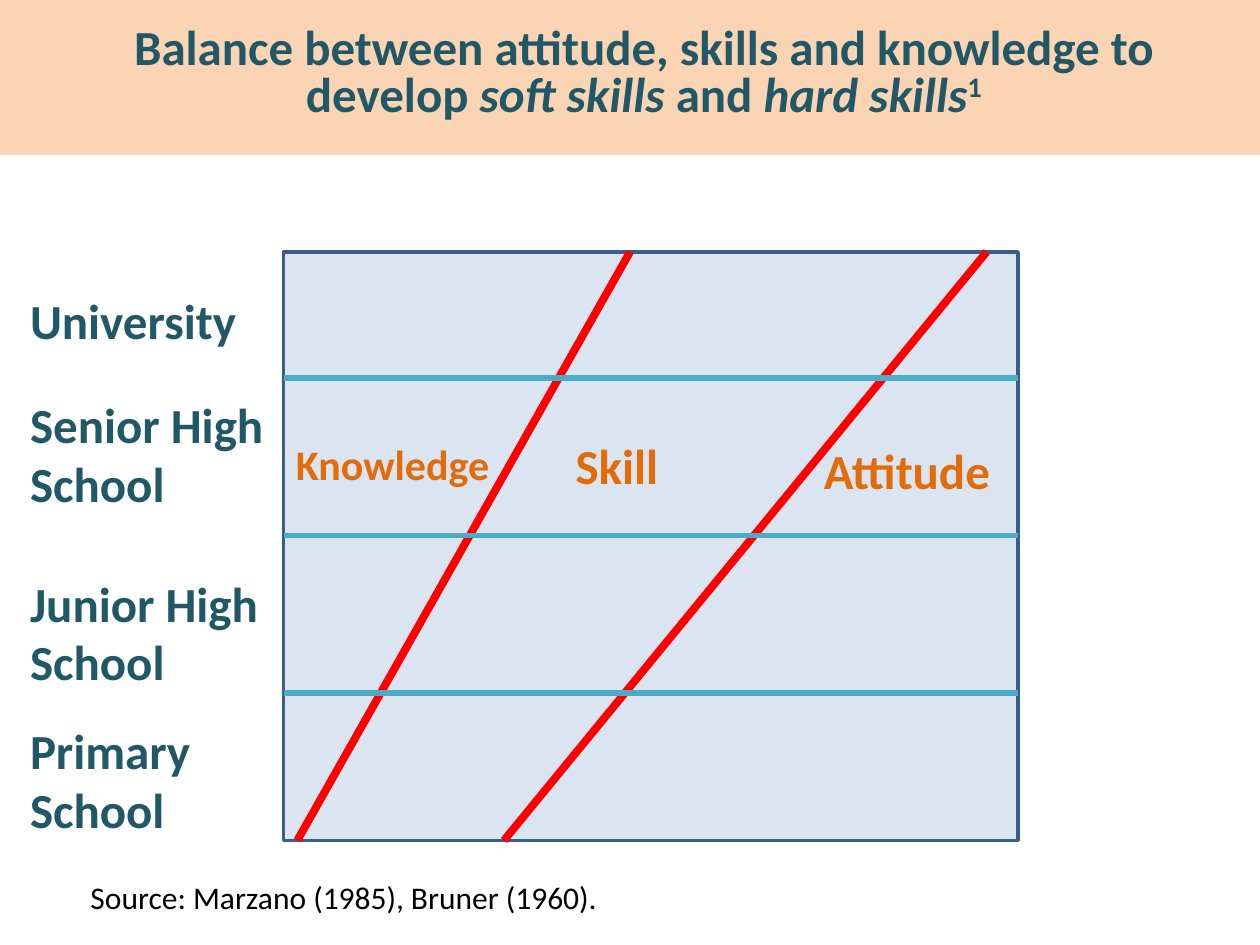
from lxml.etree import SubElement
from pptx import Presentation
from pptx.dml.color import RGBColor
from pptx.enum.shapes import MSO_CONNECTOR, MSO_SHAPE
from pptx.enum.text import MSO_ANCHOR, MSO_AUTO_SIZE, PP_ALIGN
from pptx.oxml.ns import qn
from pptx.util import Inches, Pt

FONT = "Calibri"
COLORS = {
    "band": "FBD4B4",
    "teal": "205867",
    "orange": "E36C09",
    "panel": "DAE5F1",
    "border": "395E8A",
    "diagonal": "FF0000",
    "divider": "4BACC6",
    "black": "000000",
}
TITLE = [
    ("Balance between attitude, skills and knowledge to develop ", False),
    ("soft skills ", True),
    ("and ", False),
    ("hard skills", True),
    ("1", False),
]
LEFT, TOP, RIGHT, BOTTOM = 2.25, 2, 8.08, 6.67
DIVIDERS = [5.5, 4.25, 3]
DIAGONALS = [(4, 7.83), (2.36, 5)]
DOMAINS = [
    ("Attitude", 6.44, 3.45, 1.55, 28),
    ("Skill", 4.47, 3.41, 0.87, 28),
    ("Knowledge", 2.25, 3.43, 1.75, 24),
]
LEVEL_LEFT = 0.14
LEVELS = [
    ("Primary School", 5.67, 1.96),
    ("Junior High School", 4.5, 2.41),
    ("Senior High School", 3.08, 2.11),
    ("University", 2.26, 1.96),
]
SOURCE = "Source: Marzano (1985), Bruner (1960)."


def rgb(name):
    return RGBColor.from_string(COLORS[name])


def style(run, size, color, bold=True, italic=False):
    run.font.name = FONT
    run.font.size = Pt(size)
    run.font.bold = bold
    run.font.italic = italic
    run.font.color.rgb = rgb(color)


def add_rectangle(slide, left, top, width, height, fill, border=None):
    rectangle = slide.shapes.add_shape(
        MSO_SHAPE.RECTANGLE, Inches(left), Inches(top), Inches(width), Inches(height)
    )
    rectangle.shadow.inherit = False
    rectangle.fill.solid()
    rectangle.fill.fore_color.rgb = rgb(fill)
    if border:
        rectangle.line.color.rgb = rgb(border)
        rectangle.line.width = Pt(2)
    else:
        rectangle.line.fill.background()
    return rectangle


def add_line(slide, x1, y1, x2, y2, color, width):
    line = slide.shapes.add_connector(
        MSO_CONNECTOR.STRAIGHT, Inches(x1), Inches(y1), Inches(x2), Inches(y2)
    )
    line.line.color.rgb = rgb(color)
    line.line.width = Pt(width)
    SubElement(line.element.spPr, qn("a:effectLst"))


def add_label(slide, text, left, top, width, height, size, color, bold=True, wrap=True):
    label = slide.shapes.add_textbox(
        Inches(left), Inches(top), Inches(width), Inches(height)
    )
    label.text_frame.word_wrap = wrap
    label.text_frame.text = text
    style(label.text_frame.paragraphs[0].runs[0], size, color, bold)


def add_title(slide):
    title = slide.shapes.title
    title.left, title.top = Inches(0.5), Inches(-0.03)
    title.width, title.height = Inches(9.22), Inches(1.25)
    frame = title.text_frame
    frame.auto_size = MSO_AUTO_SIZE.NONE
    frame.word_wrap = True
    frame.vertical_anchor = MSO_ANCHOR.MIDDLE
    heading = frame.paragraphs[0]
    heading.alignment = PP_ALIGN.CENTER
    heading.line_spacing = 0.8
    for text, italic in TITLE:
        run = heading.add_run()
        run.text = text
        style(run, 28, "teal", italic=italic)
    heading.runs[-1].font.element.set("baseline", "30000") if hasattr(
        heading.runs[-1].font, "element"
    ) else heading.runs[-1]._r.get_or_add_rPr().set("baseline", "30000")
    band = add_rectangle(slide, 0, 0, 10, 1.23, "band")
    title.element.addprevious(band.element)


def main():
    """Build the slide on balancing knowledge, skill and attitude by school level."""
    presentation = Presentation()
    presentation.slide_width, presentation.slide_height = Inches(10), Inches(7.5)
    slide = presentation.slides.add_slide(presentation.slide_layouts[5])
    add_title(slide)
    add_rectangle(slide, LEFT, TOP, RIGHT - LEFT, BOTTOM - TOP, "panel", "border")
    for foot, head in DIAGONALS:
        add_line(slide, foot, BOTTOM, head, TOP, "diagonal", 4.5)
    for text, left, top, width, size in DOMAINS:
        add_label(slide, text, left, top, width, 0.57, size, "orange", wrap=False)
    for height in DIVIDERS:
        add_line(slide, LEFT, height, RIGHT, height, "divider", 3)
    for text, top, width in LEVELS:
        add_label(slide, text, LEVEL_LEFT, top, width, 0.57, 28, "teal")
    add_label(slide, SOURCE, 0.62, 6.92, 8.77, 0.4, 18, "black", bold=False)
    presentation.save("out.pptx")


if __name__ == "__main__":
    main()
